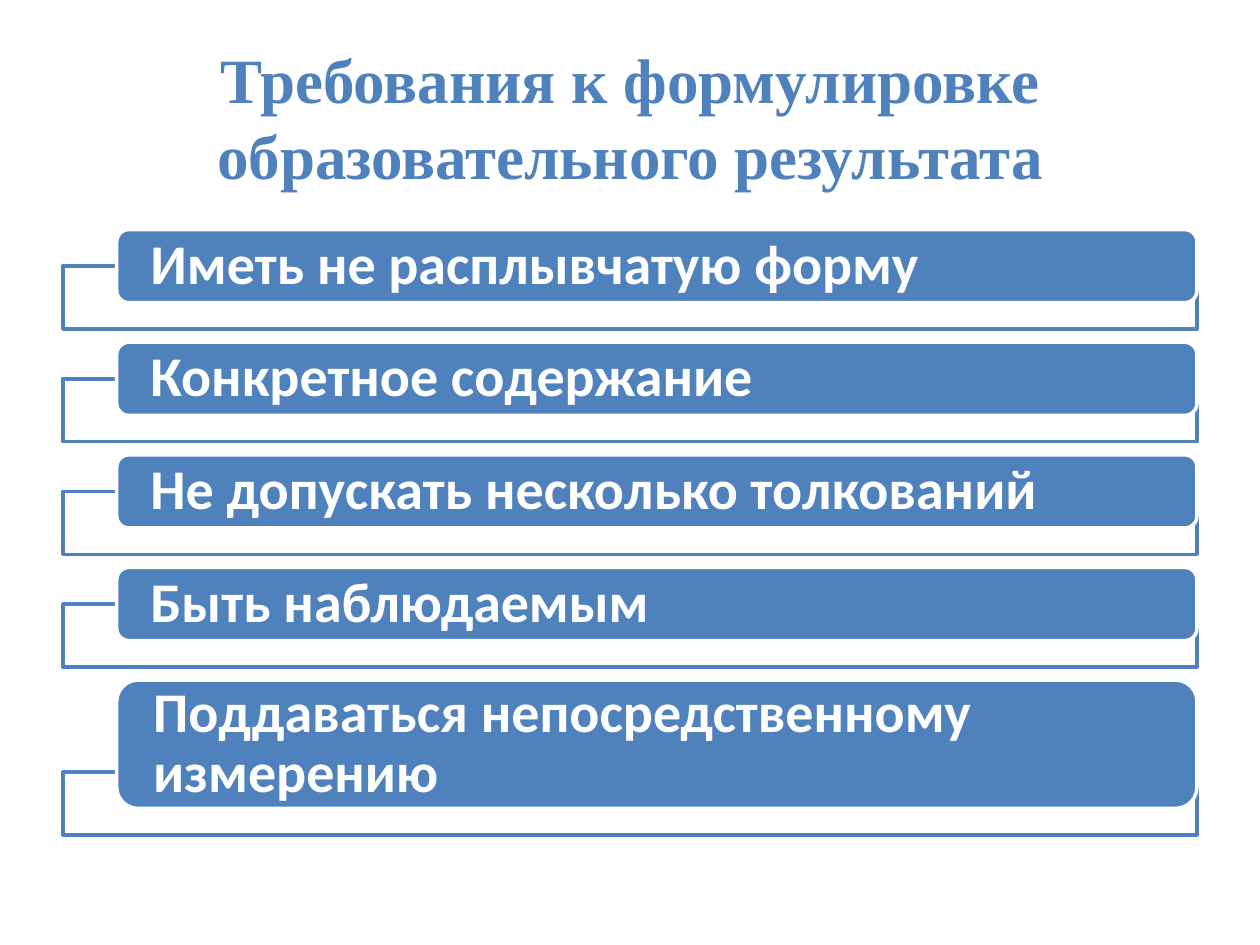
from pptx import Presentation
from pptx.dml.color import RGBColor
from pptx.enum.shapes import MSO_SHAPE
from pptx.enum.text import MSO_ANCHOR, MSO_AUTO_SIZE, PP_ALIGN
from pptx.util import Pt

BLUE = RGBColor(0x4F, 0x81, 0xBD)
WHITE = RGBColor(0xFF, 0xFF, 0xFF)

TITLE = "Требования к формулировке образовательного результата"
# Each requirement with the height of its label
REQUIREMENTS = [
    ("Иметь не расплывчатую форму", 41.8),
    ("Конкретное содержание", 41.8),
    ("Не допускать несколько толкований", 41.8),
    ("Быть наблюдаемым", 41.8),
    ("Поддаваться непосредственному измерению", 73.4),
]
FRAME_HEIGHT = 36
FRAME_DROP = 15.1  # how far a frame reaches below its label
ROW_GAP = 7.45
LABEL_INDENT = 30.7


def write_text(shape, text, *, font, size, color, align, margin=7.2, spacing=1.0):
    frame = shape.text_frame
    frame.word_wrap = True
    frame.auto_size = MSO_AUTO_SIZE.NONE
    frame.vertical_anchor = MSO_ANCHOR.MIDDLE
    frame.margin_left = frame.margin_right = Pt(margin)
    frame.margin_top = frame.margin_bottom = 0
    paragraph = frame.paragraphs[0]
    paragraph.alignment = align
    paragraph.line_spacing = spacing
    run = paragraph.add_run()
    run.text = text
    run.font.name = font
    run.font.size = Pt(size)
    run.font.bold = True
    run.font.color.rgb = color


def add_box(slide, kind, left, top, width, height, fill, line):
    shape = slide.shapes.add_shape(kind, Pt(left), Pt(top), Pt(width), Pt(height))
    shape.shadow.inherit = False
    shape.fill.solid()
    shape.fill.fore_color.rgb = fill
    shape.line.color.rgb = line
    shape.line.width = Pt(2)
    return shape


def place_title(slide, left, top, width, height):
    title = slide.shapes.title
    title.left, title.top = Pt(left), Pt(top)
    title.width, title.height = Pt(width), Pt(height)
    write_text(title, TITLE, font="Times New Roman", size=36, color=BLUE,
               align=PP_ALIGN.CENTER)


def add_requirements(slide, left, top, width):
    """Stack the labels, each over the frame that hangs below it."""
    for text, label_height in REQUIREMENTS:
        bottom = top + label_height + FRAME_DROP
        add_box(slide, MSO_SHAPE.RECTANGLE, left, bottom - FRAME_HEIGHT,
                width, FRAME_HEIGHT, WHITE, BLUE)
        label = add_box(slide, MSO_SHAPE.ROUNDED_RECTANGLE, left + LABEL_INDENT, top,
                        width - LABEL_INDENT, label_height, BLUE, WHITE)
        write_text(label, text, font="Calibri", size=32, color=WHITE,
                   align=PP_ALIGN.LEFT, margin=17.2, spacing=0.9)
        top = bottom + ROW_GAP


def main():
    presentation = Presentation()
    presentation.slide_width, presentation.slide_height = Pt(720), Pt(540)
    slide = presentation.slides.add_slide(presentation.slide_layouts[5])
    place_title(slide, 36, 21.6, 648, 90)
    add_requirements(slide, 36, 131.2, 648)
    presentation.save("out.pptx")


if __name__ == "__main__":
    main()
